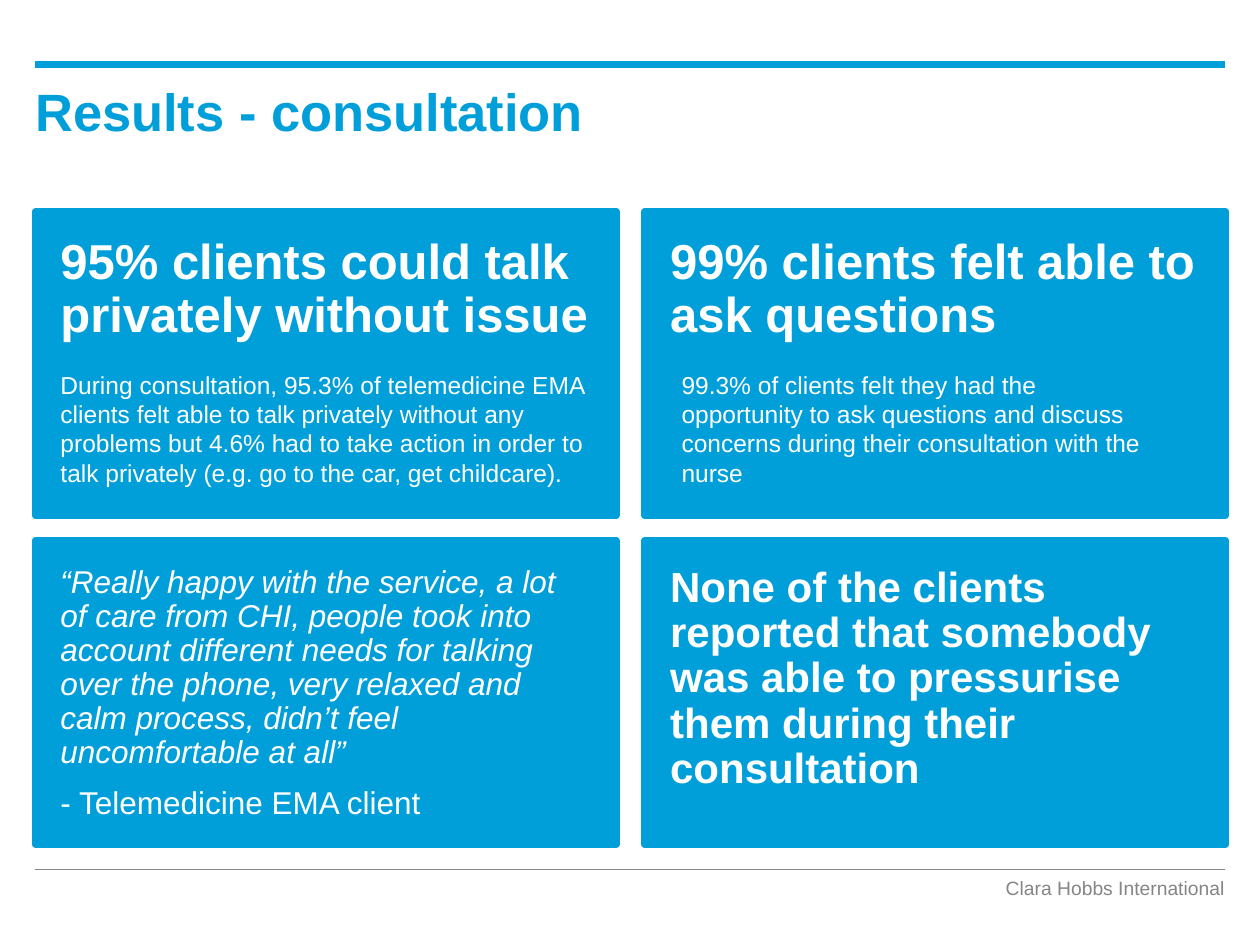
from pptx import Presentation
from pptx import util as u
from pptx.dml.color import RGBColor
from pptx.enum import shapes, text
from pptx.oxml.ns import qn
from lxml import etree

BLUE = RGBColor(0x00, 0x9F, 0xDA)
GREY = RGBColor(0x85, 0x85, 0x85)
WHITE = RGBColor(0xFF, 0xFF, 0xFF)
FONT = "Arial"

TITLE = "Results - consultation"
FOOTER = "Clara Hobbs International"

# Column, row, then paragraphs as (text, format)
CARDS = [
    (0, 0, [("95% clients could talk privately without issue", dict(size=28, bold=True))]),
    (1, 0, [("99% clients felt able to ask questions", dict(size=28, bold=True))]),
    (0, 1, [
        ("“Really happy with the service, a lot of care from CHI, people took into account "
         "different needs for talking over the phone, very relaxed and calm process, "
         "didn’t feel uncomfortable at all”", dict(size=18, italic=True)),
        ("- Telemedicine EMA client", dict(size=18)),
    ]),
    (1, 1, [("None of the clients reported that somebody was able to pressurise them "
             "during their consultation", dict(size=24, bold=True))]),
]

# Left, width (cm), text
DETAILS = [
    (0.97, 11.43, "During consultation, 95.3% of telemedicine EMA clients felt able to talk "
                  "privately without any problems but 4.6% had to take action in order to talk "
                  "privately (e.g. go to the car, get childcare)."),
    (13.49, 10.11, "99.3% of clients felt they had the opportunity to ask questions and discuss "
                   "concerns during their consultation with the nurse"),
]

LEFT, RIGHT = 0.71, 24.69
CARD_TOP, CARD_WIDTH, CARD_HEIGHT = 4.27, 11.71, 6.12
COLUMN_GAP, ROW_GAP = 0.58, 0.51


def write(frame, content, size, color=WHITE, bold=False, italic=False,
          align=text.PP_ALIGN.LEFT, line_spacing=None, before=0):
    """Fill the frame's empty first paragraph, or add one after the last."""
    paragraph = frame.paragraphs[0]
    if paragraph.runs:
        paragraph = frame.add_paragraph()
    paragraph.alignment = align
    paragraph.line_spacing = line_spacing
    paragraph.space_before = u.Pt(before)
    run = paragraph.add_run()
    run.text = content
    font = run.font
    font.name, font.size, font.bold, font.italic = FONT, u.Pt(size), bold, italic
    font.color.rgb = color


def set_frame(frame, margins, anchor=text.MSO_ANCHOR.TOP):
    """Wrap the text and set left, top, right and bottom margins in cm."""
    frame.word_wrap = True
    frame.vertical_anchor = anchor
    (frame.margin_left, frame.margin_top,
     frame.margin_right, frame.margin_bottom) = map(u.Cm, margins)


def add_text_box(slide, left, top, width, height, margins, anchor=text.MSO_ANCHOR.TOP):
    box = slide.shapes.add_textbox(*map(u.Cm, (left, top, width, height)))
    set_frame(box.text_frame, margins, anchor)
    return box.text_frame


def add_rule(slide, y, color, width):
    line = slide.shapes.add_connector(
        shapes.MSO_CONNECTOR.STRAIGHT, u.Cm(LEFT), u.Cm(y), u.Cm(RIGHT), u.Cm(y))
    line.line.color.rgb = color
    line.line.width = u.Pt(width)
    etree.SubElement(line._element.spPr, qn("a:effectLst"))


def add_card(slide, column, row, paragraphs):
    left = LEFT + column * (CARD_WIDTH + COLUMN_GAP)
    top = CARD_TOP + row * (CARD_HEIGHT + ROW_GAP)
    card = slide.shapes.add_shape(
        shapes.MSO_SHAPE.RECTANGLE, *map(u.Cm, (left, top, CARD_WIDTH, CARD_HEIGHT)))
    card.shadow.inherit = False
    card.fill.solid()
    card.fill.fore_color.rgb = BLUE
    card.line.color.rgb = BLUE
    card.line.width = u.Pt(4)
    set_frame(card.text_frame, (0.51, 0.51, 0.51, 0.61))
    for content, style in paragraphs:
        write(card.text_frame, content, line_spacing=0.9, before=10, **style)


def main():
    presentation = Presentation()
    presentation.slide_width, presentation.slide_height = u.Cm(25.4), u.Cm(19.05)
    slide = presentation.slides.add_slide(presentation.slide_layouts[6])

    add_rule(slide, 1.3, BLUE, 4)
    add_rule(slide, 17.53, GREY, 1)
    footer = add_text_box(slide, 12.52, 17.55, 12.17, 0.69, (0, 0.13, 0, 0.13),
                          text.MSO_ANCHOR.MIDDLE)
    write(footer, FOOTER, 11, GREY, align=text.PP_ALIGN.RIGHT)
    title = add_text_box(slide, LEFT, 1.73, 24, 2.08, (0, 0, 0, 0.13))
    write(title, TITLE, 30, BLUE, bold=True, line_spacing=0.9)

    for column, row, paragraphs in CARDS:
        add_card(slide, column, row, paragraphs)
    for left, width, content in DETAILS:
        detail = add_text_box(slide, left, 7.32, width, 2.64, (0.25, 0.13, 0.25, 0.13))
        write(detail, content, 14)

    presentation.save("out.pptx")


if __name__ == "__main__":
    main()
